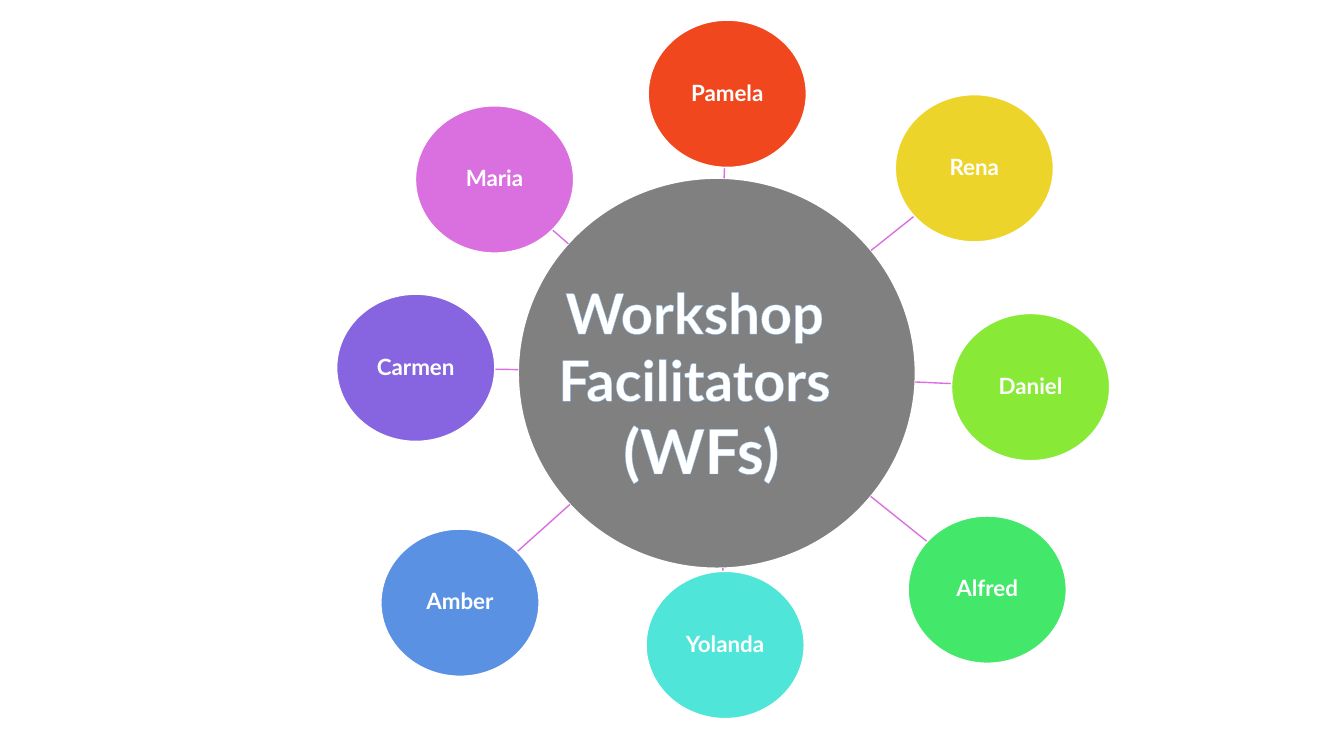
from dataclasses import dataclass
from math import hypot
from typing import Any

from lxml.etree import SubElement
from pptx import Presentation
from pptx.dml.color import RGBColor as RGB
from pptx.enum.shapes import MSO_CONNECTOR as CONN, MSO_SHAPE as SHAPE
from pptx.enum.text import MSO_ANCHOR as ANCHOR, MSO_AUTO_SIZE as FIT, PP_ALIGN as ALIGN
from pptx.oxml import parse_xml
from pptx.oxml.ns import nsdecls, qn
from pptx.util import Pt


@dataclass(frozen=True)
class Theme:
    font: str = "Lato"
    white: str = "FFFFFF"
    hub: str = "808080"
    spoke: str = "DA6FDF"
    outline: str = "8BBEF1"
    name_size: float = 16
    title_size: float = 40
    acronym_size: float = 44
    line_width: float = 1
    outline_width: float = 0.52


@dataclass(frozen=True)
class Disc:
    label: str
    x: float
    y: float
    color: str
    width: float = 113
    height: float = 105.2

    def edge_towards(self, other: "Disc") -> tuple[float, float]:
        dx, dy = other.x - self.x, other.y - self.y
        t = 1 / hypot(dx / (self.width / 2), dy / (self.height / 2))
        return self.x + t * dx, self.y + t * dy


THEME = Theme()
HUB = Disc("", 512, 266.6, THEME.hub, 283.6, 278.6)
FACILITATORS = [
    Disc("Pamela", 519.5, 67, "F1471F"),
    Disc("Rena", 696, 120.2, "EDD42B"),
    Disc("Daniel", 736.2, 276.5, "88EA37"),
    Disc("Alfred", 705.2, 421.2, "43E769"),
    Disc("Yolanda", 518, 460.7, "4FE5D8"),
    Disc("Amber", 328.6, 430.5, "5A91E3"),
    Disc("Carmen", 297, 262.7, "8765E1"),
    Disc("Maria", 353.3, 128.2, "DA6FDF"),
]
TITLE_LINES = [
    ("Workshop ", THEME.title_size),
    ("Facilitators ", THEME.title_size),
    ("(WFs)", THEME.acronym_size),
]


def apply(target: Any, **values: Any) -> None:
    for name, value in values.items():
        setattr(target, name, value)


def add_text(p: Any, text: str, size: float) -> Any:
    r = p.add_run()
    r.text = text
    apply(r.font, name=THEME.font, size=Pt(size), bold=True)
    r.font.color.rgb = RGB.from_string(THEME.white)
    return r


def draw_disc(s: Any, disc: Disc) -> None:
    sp = s.shapes.add_shape(
        SHAPE.OVAL, Pt(disc.x - disc.width / 2), Pt(disc.y - disc.height / 2),
        Pt(disc.width), Pt(disc.height))
    sp.shadow.inherit = False
    sp.fill.solid()
    sp.fill.fore_color.rgb = RGB.from_string(disc.color)
    sp.line.color.rgb = RGB.from_string(THEME.white)
    sp.line.width = Pt(THEME.line_width)
    if disc.label:
        tf = sp.text_frame
        inset = Pt(0.8)
        apply(tf, margin_left=inset, margin_right=inset, margin_top=inset,
              margin_bottom=inset, vertical_anchor=ANCHOR.MIDDLE, word_wrap=True)
        p = tf.paragraphs[0]
        apply(p, alignment=ALIGN.CENTER, line_spacing=0.9, space_after=Pt(5.6))
        add_text(p, disc.label, THEME.name_size)


def draw_spoke(s: Any, disc: Disc) -> None:
    ends = HUB.edge_towards(disc) + disc.edge_towards(HUB)
    sp = s.shapes.add_connector(CONN.STRAIGHT, *(Pt(v) for v in ends))
    sp.line.color.rgb = RGB.from_string(THEME.spoke)
    sp.line.width = Pt(THEME.line_width)
    SubElement(sp.element.spPr, qn("a:effectLst"))


def draw_title(s: Any) -> None:
    sp = s.shapes.title
    apply(sp, left=Pt(353.5), top=Pt(195), width=Pt(295), height=Pt(162.7))
    tf = sp.text_frame
    apply(tf, word_wrap=True, auto_size=FIT.SHAPE_TO_FIT_TEXT, vertical_anchor=ANCHOR.TOP)
    for i, (text, size) in enumerate(TITLE_LINES):
        p = tf.add_paragraph() if i else tf.paragraphs[0]
        apply(p, alignment=ALIGN.CENTER, line_spacing=1.0)
        r = add_text(p, text, size)
        r.font.fill.solid()
        r.font.fill.fore_color.rgb = RGB.from_string(THEME.white)
        ln = parse_xml(
            f'<a:ln {nsdecls("a")} w="{Pt(THEME.outline_width)}"><a:solidFill>'
            f'<a:srgbClr val="{THEME.outline}"/></a:solidFill></a:ln>')
        r.font.fill
        r._r.get_or_add_rPr().insert(0, ln)
    sp.element.getparent().append(sp.element)


def main() -> None:
    prs = Presentation()
    apply(prs, slide_width=Pt(960), slide_height=Pt(540))
    s = prs.slides.add_slide(prs.slide_layouts[5])
    draw_disc(s, HUB)
    for disc in FACILITATORS:
        draw_spoke(s, disc)
        draw_disc(s, disc)
    draw_title(s)
    prs.save("out.pptx")


if __name__ == "__main__":
    main()
